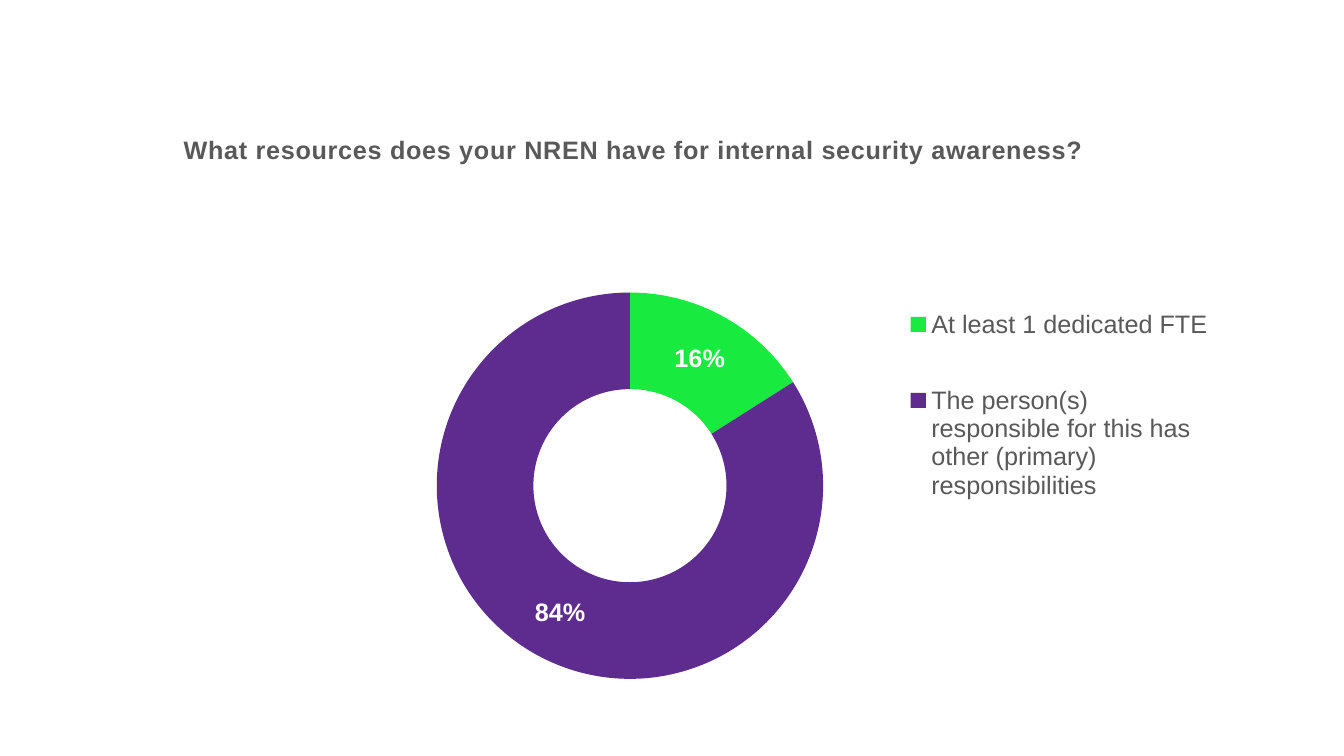
from dataclasses import dataclass

from lxml import etree
from pptx import Presentation
from pptx.chart.data import CategoryChartData
from pptx.dml.color import RGBColor
from pptx.enum.chart import XL_CHART_TYPE, XL_LEGEND_POSITION
from pptx.oxml import parse_xml
from pptx.oxml.ns import nsdecls, qn
from pptx.text.text import Font
from pptx.util import Pt

DOUGHNUT = XL_CHART_TYPE.DOUGHNUT
LEGEND_TOP = XL_LEGEND_POSITION.TOP

GREEN = RGBColor(0x18, 0xEA, 0x3F)
PURPLE = RGBColor(0x5E, 0x2B, 0x8F)
GREY = RGBColor(0x59, 0x59, 0x59)
WHITE = RGBColor(0xFF, 0xFF, 0xFF)
BLACK = RGBColor(0, 0, 0)

QUESTION = "What resources does your NREN have for internal security awareness?"
CHART_WIDTH = 900
CHART_HEIGHT = 432


@dataclass(frozen=True)
class Answer:
    label: str
    share: int
    color: RGBColor


@dataclass(frozen=True)
class Area:
    left: float
    top: float
    width: float | None = None
    height: float | None = None
    target: str | None = None


ANSWERS = [
    Answer("At least 1 dedicated FTE", 16, GREEN),
    Answer(
        "The person(s) responsible for this has other (primary) responsibilities",
        84,
        PURPLE,
    ),
]
TITLE_AREA = Area(128, 30)
PLOT_AREA = Area(312, 147, 276, 276, "inner")
LEGEND_AREA = Area(645, 125.5, 223, 203.5)


def style_font(font: Font, size: float, color: RGBColor, bold: bool = False) -> None:
    font.name = "Arial"
    font.size = Pt(size)
    font.bold = bold
    font.color.rgb = color


def make_layout(area: Area) -> etree._Element:
    settings = {
        "layoutTarget": area.target,
        "xMode": "edge",
        "yMode": "edge",
        "x": area.left / CHART_WIDTH,
        "y": area.top / CHART_HEIGHT,
        "w": area.width and area.width / CHART_WIDTH,
        "h": area.height and area.height / CHART_HEIGHT,
    }
    children = "".join(
        f'<c:{name} val="{value}"/>'
        for name, value in settings.items()
        if value is not None
    )
    return parse_xml(
        f'<c:layout {nsdecls("c")}><c:manualLayout>{children}</c:manualLayout></c:layout>'
    )


def place(element: etree._Element, area: Area, previous: str | None = None) -> None:
    for layout in element.findall(qn("c:layout")):
        element.remove(layout)
    if previous is None:
        element.insert(0, make_layout(area))
    else:
        element.find(qn(previous)).addnext(make_layout(area))


def main() -> None:
    presentation = Presentation()
    presentation.slide_width = Pt(960)
    presentation.slide_height = Pt(540)
    slide = presentation.slides.add_slide(presentation.slide_layouts[6])

    data = CategoryChartData(number_format="0")
    data.categories = [answer.label for answer in ANSWERS]
    data.add_series(QUESTION, [answer.share for answer in ANSWERS])
    chart = slide.shapes.add_chart(
        DOUGHNUT, Pt(0), Pt(62), Pt(CHART_WIDTH), Pt(CHART_HEIGHT), data
    ).chart
    style_font(chart.font, 10, BLACK)

    chart.has_title = True
    paragraph = chart.chart_title.text_frame.paragraphs[0]
    paragraph.text = QUESTION
    style_font(paragraph.font, 18, GREY, bold=True)
    run = paragraph.runs[0]
    style_font(run.font, 18, GREY, bold=True)
    run.font._element.set("spc", "50")
    chart.chart_title.include_in_layout = False

    chart.has_legend = True
    chart.legend.position = LEGEND_TOP
    chart.legend.include_in_layout = False
    style_font(chart.legend.font, 18, GREY)

    plot = chart.plots[0]
    plot.vary_by_categories = True
    for index, answer in enumerate(ANSWERS):
        fill = plot.series[0].points[index].format.fill
        fill.solid()
        fill.fore_color.rgb = answer.color

    plot.has_data_labels = True
    labels = plot.data_labels
    labels.show_percentage = True
    labels.show_value = False
    labels.number_format = "0%"
    labels.number_format_is_linked = False
    style_font(labels.font, 18, WHITE, bold=True)

    chart_element = chart._chartSpace.chart
    place(chart_element.find(qn("c:title")), TITLE_AREA, "c:tx")
    place(chart_element.plotArea, PLOT_AREA)
    place(chart_element.find(qn("c:legend")), LEGEND_AREA, "c:legendPos")

    presentation.save("out.pptx")


if __name__ == "__main__":
    main()
